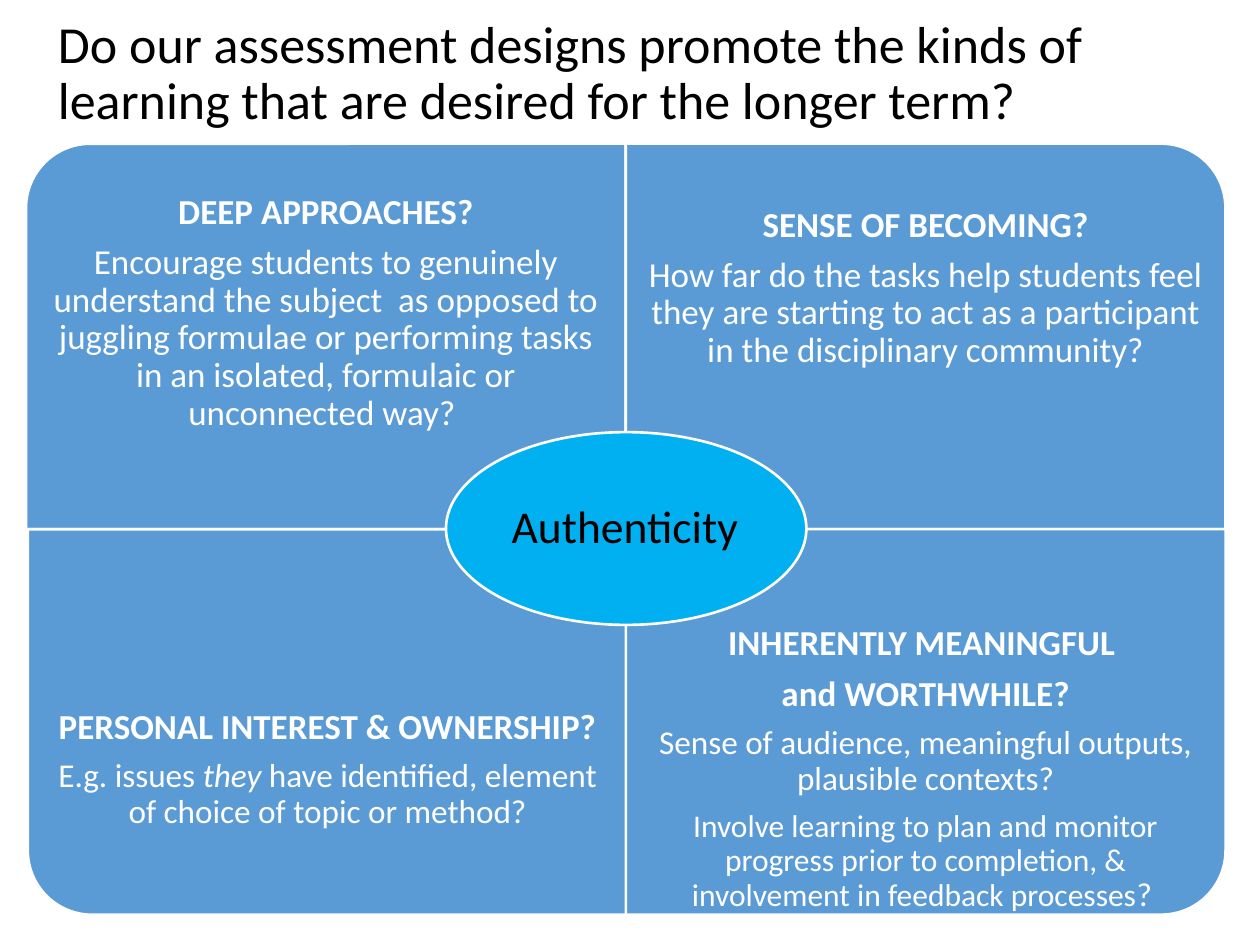
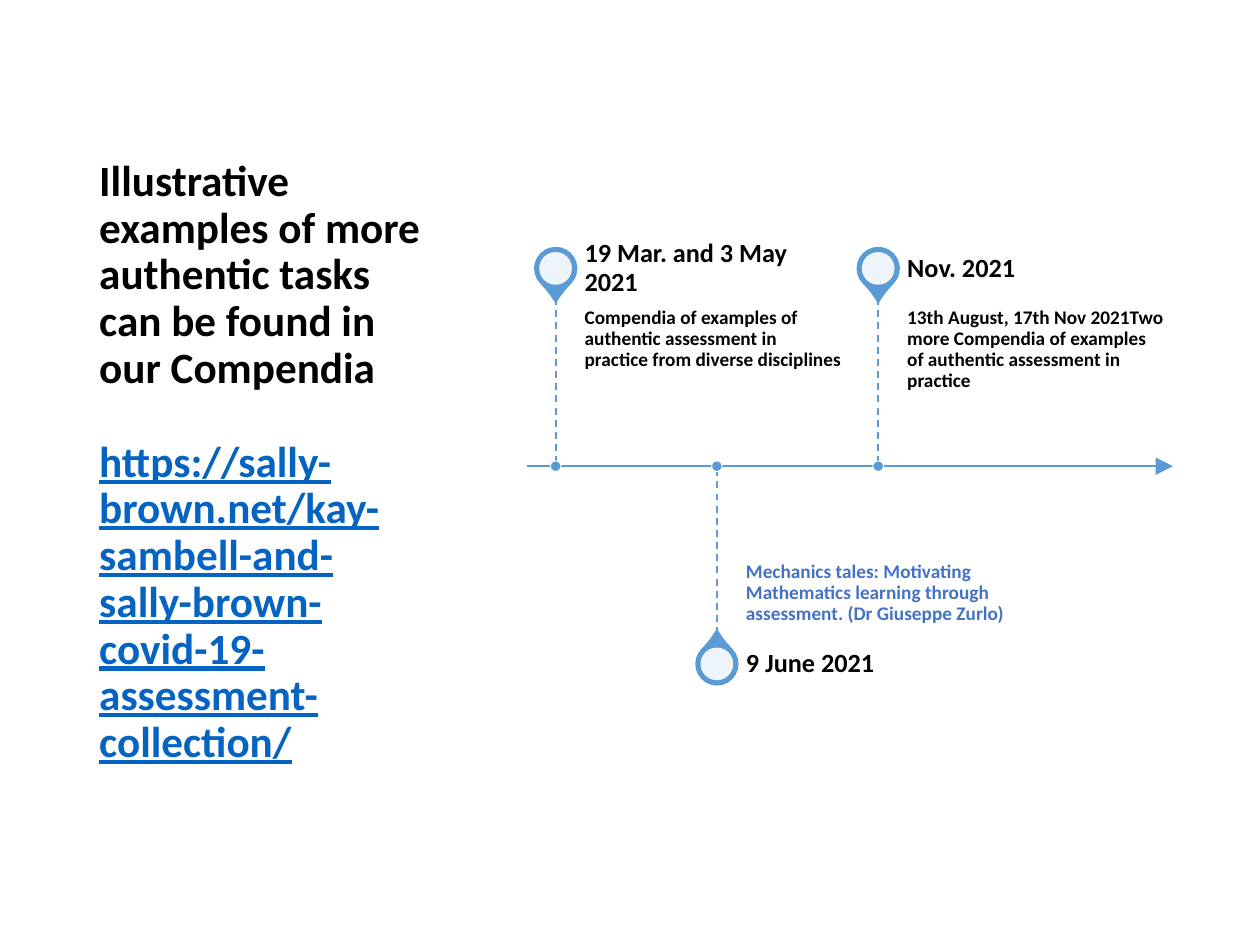
from dataclasses import dataclass
from typing import NamedTuple, Optional, Sequence

import lxml.etree
import pptx
import pptx.dml.color
import pptx.enum.dml
import pptx.enum.shapes
import pptx.enum.text
import pptx.oxml
import pptx.oxml.ns
import pptx.util

Pt = pptx.util.Pt
RGBColor = pptx.dml.color.RGBColor
Shape = pptx.enum.shapes.MSO_SHAPE
Anchor = pptx.enum.text.MSO_ANCHOR
Align = pptx.enum.text.PP_ALIGN
qn = pptx.oxml.ns.qn

BLACK = RGBColor(0x00, 0x00, 0x00)
WHITE = RGBColor(0xFF, 0xFF, 0xFF)
BLUE = RGBColor(0x5B, 0x9B, 0xD5)
SKY = RGBColor(0x00, 0xB0, 0xF0)
LINK_BLUE = RGBColor(0x05, 0x63, 0xC1)
ACCENT_BLUE = RGBColor(0x44, 0x72, 0xC4)
FONT = "Calibri"
TITLE_ONLY = 5


class Box(NamedTuple):
    left: float
    top: float
    width: float
    height: float


class Insets(NamedTuple):
    left: float
    top: float
    right: float
    bottom: float


class Run(NamedTuple):
    """A piece of text; None means the format of the whole frame."""
    text: str
    size: Optional[float] = None
    bold: Optional[bool] = None
    italic: bool = False
    color: Optional[RGBColor] = None
    underline: bool = False


Paragraphs = Sequence[Sequence[Run]]
TITLE_INSETS = Insets(7.2, 3.6, 7.2, 3.6)


@dataclass(frozen=True)
class Quadrant:
    left: float
    top: float
    rotation: int
    text_top: float
    paragraphs: Paragraphs
    top_inset: float = 11.5


@dataclass(frozen=True)
class Milestone:
    date: str
    description: str
    above: bool = True
    color: RGBColor = BLACK


def write_text(shape, paragraphs: Paragraphs, *, size: float, color: RGBColor = BLACK,
               bold: bool = False, align=Align.LEFT, anchor=Anchor.MIDDLE,
               insets: Insets = TITLE_INSETS, space_before: float = 0,
               space_after: float = 0) -> None:
    """Fill the shape; space_before applies from the second paragraph on."""
    frame = shape.text_frame
    frame.word_wrap = True
    frame.auto_size = pptx.enum.text.MSO_AUTO_SIZE.NONE
    frame.vertical_anchor = anchor
    frame.margin_left, frame.margin_top, frame.margin_right, frame.margin_bottom = map(Pt, insets)
    for index, runs in enumerate(paragraphs):
        paragraph = frame.add_paragraph() if index else frame.paragraphs[0]
        paragraph.alignment = align
        paragraph.line_spacing = 0.9
        paragraph.space_before = Pt(space_before if index else 0)
        paragraph.space_after = Pt(space_after)
        for item in runs:
            run = paragraph.add_run()
            run.text = item.text
            font = run.font
            font.name = FONT
            font.size = Pt(item.size or size)
            font.bold = bold if item.bold is None else item.bold
            font.italic = item.italic
            font.underline = item.underline
            font.color.rgb = item.color or color


def add_text(slide, box: Box, paragraphs: Paragraphs, **text_format) -> None:
    write_text(slide.shapes.add_textbox(*map(Pt, box)), paragraphs, **text_format)


def add_titled_slide(presentation, box: Box, paragraphs: Paragraphs, **text_format):
    slide = presentation.slides.add_slide(presentation.slide_layouts[TITLE_ONLY])
    title = slide.shapes.title
    title.left, title.top, title.width, title.height = map(Pt, box)
    write_text(title, paragraphs, **text_format)
    return slide


def add_shape(slide, kind, box: Box, fill: RGBColor, line: Optional[RGBColor] = None,
              line_width: float = 1, rotation: float = 0):
    shape = slide.shapes.add_shape(kind, *map(Pt, box))
    shape.shadow.inherit = False
    shape.rotation = rotation
    shape.fill.solid()
    shape.fill.fore_color.rgb = fill
    if line is None:
        shape.line.fill.background()
    else:
        shape.line.color.rgb = line
        shape.line.width = Pt(line_width)
    return shape


def add_centred(slide, kind, x: float, y: float, diameter: float, fill: RGBColor, **style):
    box = Box(x - diameter / 2, y - diameter / 2, diameter, diameter)
    return add_shape(slide, kind, box, fill, **style)


def add_line(slide, start: tuple[float, float], end: tuple[float, float], width: float,
             dashed: bool = False, arrow: bool = False) -> None:
    connector = slide.shapes.add_connector(
        pptx.enum.shapes.MSO_CONNECTOR.STRAIGHT, *map(Pt, (*start, *end)))
    connector.line.color.rgb = BLUE
    connector.line.width = Pt(width)
    if dashed:
        connector.line.dash_style = pptx.enum.dml.MSO_LINE.DASH
    properties = connector._element.spPr
    if arrow:
        lxml.etree.SubElement(properties.find(qn("a:ln")), qn("a:tailEnd"),
                              type="triangle", w="lg", len="lg")
    lxml.etree.SubElement(properties, qn("a:effectLst"))


# Matrix of four questions around one idea
TILE_WIDTH, TILE_HEIGHT = 342.72, 220.32
TILE_TEXT_HEIGHT = 165.6
UPPER, LOWER = 82.08, 302.4
LOWER_TEXT = LOWER + TILE_HEIGHT - TILE_TEXT_HEIGHT
RIGHT = 357.6

QUADRANTS = (
    Quadrant(14.88, UPPER, 270, UPPER, (
        [Run("DEEP APPROACHES?", bold=True)],
        [Run("Encourage students to genuinely understand the subject  as opposed to juggling "
             "formulae or performing tasks in an isolated, formulaic or unconnected way? ")],
    ), top_inset=40),
    Quadrant(RIGHT, UPPER, 0, UPPER, (
        [Run("SENSE OF BECOMING?", bold=True)],
        [Run("How far do the tasks help students feel they are starting to act as a "
             "participant in the disciplinary community?")],
    )),
    Quadrant(15.84, LOWER, 180, LOWER_TEXT, (
        [Run("PERSONAL INTEREST & OWNERSHIP?", bold=True)],
        [Run("E.g. issues ", 19), Run("they ", 19, italic=True),
         Run("have identified, element of choice of topic or method?", 19)],
    )),
    Quadrant(RIGHT, LOWER, 90, LOWER_TEXT, (
        [Run("INHERENTLY MEANINGFUL ", bold=True)],
        [Run("and WORTHWHILE?", bold=True)],
        [Run("Sense of audience, meaningful outputs, plausible contexts?", 19)],
        [Run("Involve learning to plan and monitor progress prior to completion, & "
             "involvement in feedback processes", 18), Run("? ", 19)],
    )),
)


def add_quadrant(slide, quadrant: Quadrant) -> None:
    width, height = TILE_WIDTH, TILE_HEIGHT
    if quadrant.rotation % 180:
        width, height = height, width
    box = Box(quadrant.left + (TILE_WIDTH - width) / 2,
              quadrant.top + (TILE_HEIGHT - height) / 2, width, height)
    add_shape(slide, Shape.ROUND_1_RECTANGLE, box, BLUE, WHITE, 1.5, quadrant.rotation)
    add_text(slide, Box(quadrant.left, quadrant.text_top, TILE_WIDTH, TILE_TEXT_HEIGHT),
             quadrant.paragraphs, size=20, color=WHITE, align=Align.CENTER,
             insets=Insets(11.5, quadrant.top_inset, 11.5, 11.5), space_after=7)


def build_matrix_slide(presentation) -> None:
    slide = add_titled_slide(
        presentation, Box(25.92, 3.6, 643.68, 78.48),
        [[Run("Do our assessment designs promote the kinds of learning that are desired "
              "for the longer term?")]], size=29.7)
    for quadrant in QUADRANTS:
        add_quadrant(slide, quadrant)
    add_shape(slide, Shape.OVAL, Box(254.88, 246.96, 205.92, 110.16), SKY, WHITE, 1.5)
    add_text(slide, Box(284.4, 263.52, 145.44, 77.76), [[Run("Authenticity")]], size=26,
             align=Align.CENTER, insets=Insets(0, 8, 0, 8), space_after=9.1)


# Timeline
AXIS_Y = 266.4
AXIS_START, AXIS_END = 300.96, 670.32
FIRST_X, MILESTONE_STEP = 317.52, 92.16
STEM_LENGTH = 96
PIN_DISTANCE = 113
LABEL_GAP, LABEL_WIDTH, DATE_HEIGHT = 16.56, 151.92, 33.84

MILESTONES = (
    Milestone("19 Mar. and 3 May 2021",
              "Compendia of examples of authentic assessment in practice from diverse disciplines"),
    Milestone("9 June 2021",
              "Mechanics tales: Motivating Mathematics learning through assessment. "
              "(Dr Giuseppe Zurlo)", above=False, color=ACCENT_BLUE),
    Milestone("Nov. 2021",
              "13th August, 17th Nov 2021Two more Compendia of examples of authentic "
              "assessment in practice"),
)


def add_pin(slide, x: float, y: float, rotation: float) -> None:
    drop = add_centred(slide, Shape.TEAR, x, y, 23.76, BLUE, line=BLUE, rotation=rotation)
    drop.adjustments[0] = 1.15
    disc = add_centred(slide, Shape.OVAL, x, y, 18.72, WHITE)
    color = disc._element.spPr.find(qn("a:solidFill"))[0]
    lxml.etree.SubElement(color, qn("a:alpha"), val="90000")


def add_milestone(slide, milestone: Milestone, x: float) -> None:
    if milestone.above:
        direction, rotation, anchor = -1, 135, Anchor.TOP
        insets = Insets(0, 5.76, 4.5, 7.92)
    else:
        direction, rotation, anchor = 1, 315, Anchor.BOTTOM
        insets = Insets(0, 7.92, 0, 5.76)
    stem_end = AXIS_Y + direction * STEM_LENGTH
    label_left = x + LABEL_GAP
    date_top = stem_end - DATE_HEIGHT if milestone.above else stem_end
    add_pin(slide, x, AXIS_Y + direction * PIN_DISTANCE, rotation)
    add_text(slide, Box(label_left, min(AXIS_Y, stem_end), LABEL_WIDTH, STEM_LENGTH),
             [[Run(milestone.description)]], size=11, bold=True, color=milestone.color,
             anchor=anchor, insets=insets, space_after=3.85)
    add_text(slide, Box(label_left, date_top, LABEL_WIDTH, DATE_HEIGHT),
             [[Run(milestone.date)]], size=15, bold=True, insets=Insets(0, 0, 7.2, 0),
             space_after=5.25)
    add_line(slide, (x, stem_end), (x, AXIS_Y), 1, dashed=True)
    add_centred(slide, Shape.OVAL, x, AXIS_Y, 6, BLUE, line=WHITE, line_width=0.5)


def build_timeline_slide(presentation) -> None:
    slide = add_titled_slide(
        presentation, Box(49.5, 100.08, 199.44, 329.04),
        [[Run("Illustrative examples of more authentic tasks can be found in our Compendia")],
         [Run("https://sally-brown.net/kay-sambell-and-sally-brown-covid-19-assessment-collection/",
              color=LINK_BLUE, underline=True)]],
        size=24.7, bold=True, space_before=27)
    add_line(slide, (AXIS_START, AXIS_Y), (AXIS_END, AXIS_Y), 1.5, arrow=True)
    for index, milestone in enumerate(MILESTONES):
        add_milestone(slide, milestone, FIRST_X + index * MILESTONE_STEP)


def main() -> None:
    presentation = pptx.Presentation()
    presentation.slide_width, presentation.slide_height = Pt(720), Pt(540)
    build_matrix_slide(presentation)
    build_timeline_slide(presentation)
    presentation.save("out.pptx")


if __name__ == "__main__":
    main()
